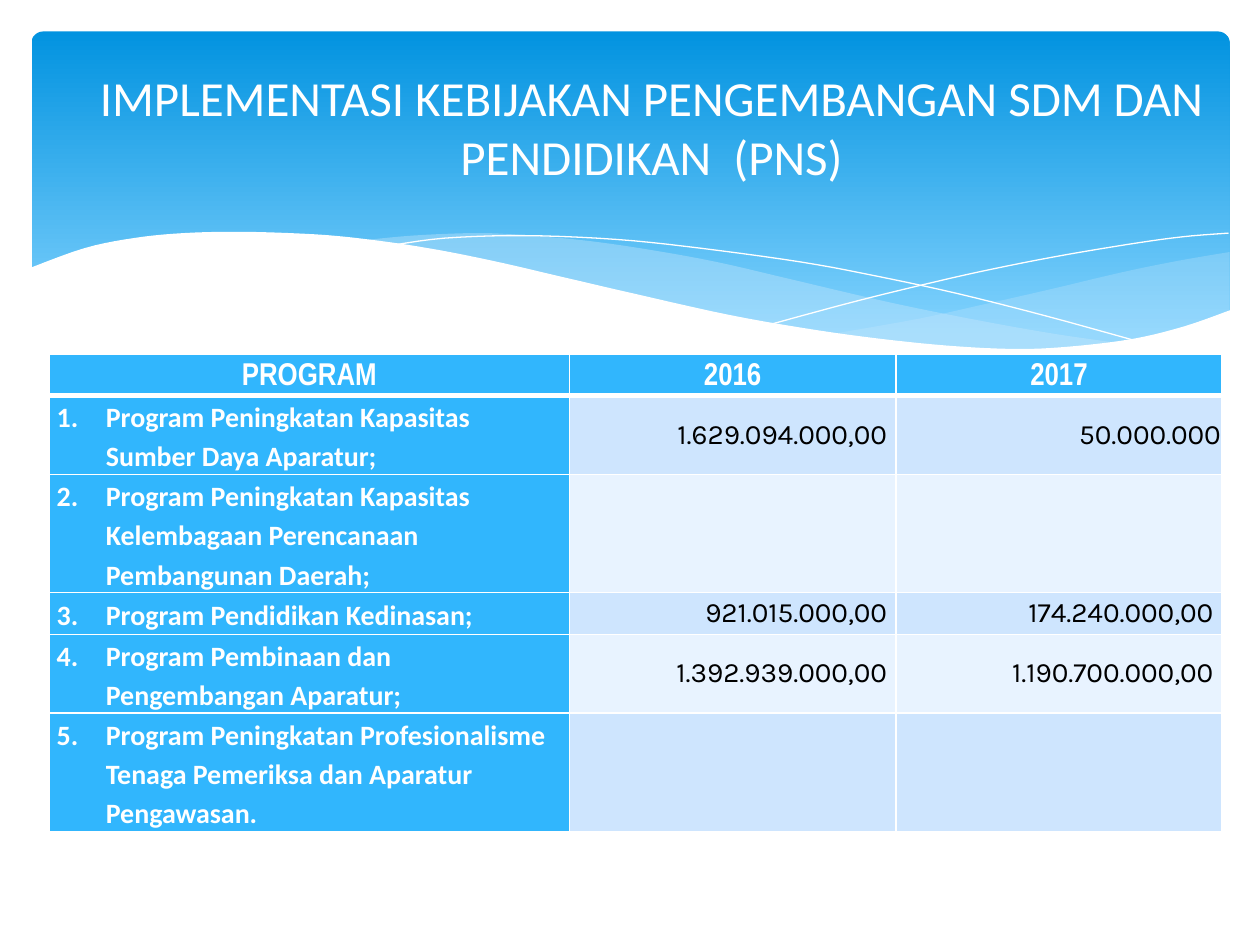
import pptx
import pptx.util
import pptx.dml.color
import pptx.enum.shapes
import pptx.enum.text
import pptx.oxml
import pptx.oxml.ns
from lxml import etree

Inches, Pt = pptx.util.Inches, pptx.util.Pt
RGBColor = pptx.dml.color.RGBColor
PP_ALIGN = pptx.enum.text.PP_ALIGN
MIDDLE = pptx.enum.text.MSO_ANCHOR.MIDDLE
qn = pptx.oxml.ns.qn

WHITE = RGBColor(0xFF, 0xFF, 0xFF)
BLACK = RGBColor(0, 0, 0)
SKY_DARK = RGBColor(0x02, 0x93, 0xE0)
SKY_LIGHT = RGBColor(0x83, 0xD3, 0xFE)
MIST = RGBColor(0xC6, 0xE7, 0xFC)
HEADER_BLUE = RGBColor(0x31, 0xB6, 0xFD)
BANDS = RGBColor(0xCE, 0xE5, 0xFE), RGBColor(0xE8, 0xF3, 0xFF)

TITLE_ONLY = 5
TEXT_FONT, HEADER_FONT, NUMBER_FONT = "Calibri", "Arial Narrow", "Karla"


def smooth(points, steps=5):
    """Catmull-Rom curve through the points."""
    ends = [points[0], *points, points[-1]]
    curve = [points[0]]
    for a, b, c, d in zip(ends, ends[1:], ends[2:], ends[3:]):
        for step in range(1, steps + 1):
            t = step / steps
            curve.append(tuple(
                0.5 * (2 * q + (r - p) * t + (2 * p - 5 * q + 4 * r - s) * t ** 2
                       + (3 * q - p - 3 * r + s) * t ** 3)
                for p, q, r, s in zip(a, b, c, d)))
    return curve


class Deck:
    def __init__(self):
        self.presentation = pptx.Presentation()
        self.presentation.slide_width = Inches(10)
        self.presentation.slide_height = Inches(7.5)
        layout = self.presentation.slide_layouts[TITLE_ONLY]
        self.slide = self.presentation.slides.add_slide(layout)
        self.shapes = self.slide.shapes

    def panel(self, left, top, width, height):
        panel = self.shapes.add_shape(
            pptx.enum.shapes.MSO_SHAPE.ROUNDED_RECTANGLE,
            Inches(left), Inches(top), Inches(width), Inches(height))
        panel.adjustments[0] = 0.034
        panel.shadow.inherit = False
        panel.line.fill.background()
        panel.fill.gradient()
        panel.fill.gradient_angle = 270
        stops = panel.fill.gradient_stops
        for stop, position, color in zip(stops, (0, 0.9), (SKY_DARK, SKY_LIGHT)):
            stop.position = position
            stop.color.rgb = color

    def outline(self, points, close):
        corners = [(Inches(x), Inches(y)) for x, y in points]
        builder = self.shapes.build_freeform(*corners[0])
        builder.add_line_segments(corners[1:], close=close)
        shape = builder.convert_to_shape()
        shape.shadow.inherit = False
        return shape

    def wave(self, points, color, opacity=100):
        wave = self.outline(points, close=True)
        wave.line.fill.background()
        wave.fill.solid()
        wave.fill.fore_color.rgb = color
        if opacity < 100:
            tint = wave.fill._xPr.find(".//" + qn("a:srgbClr"))
            etree.SubElement(tint, qn("a:alpha"), val=str(opacity * 1000))

    def thread(self, points):
        thread = self.outline(smooth(points), close=False)
        thread.fill.background()
        thread.line.color.rgb = WHITE
        thread.line.width = Pt(0)

    def title(self, text, left, top, width, height):
        title = self.shapes.title
        self.shapes._spTree.append(title._element)  # in front of the waves
        title.left, title.top = Inches(left), Inches(top)
        title.width, title.height = Inches(width), Inches(height)
        frame = title.text_frame
        frame.text = text
        frame.word_wrap = True
        frame.auto_size = pptx.enum.text.MSO_AUTO_SIZE.NONE
        frame.vertical_anchor = MIDDLE
        self.style(frame.paragraphs[0], TEXT_FONT, 28, WHITE, PP_ALIGN.CENTER)

    def style(self, paragraph, font, size, color, align, bold=False):
        paragraph.alignment = align
        paragraph.font.name = font
        paragraph.font.size = Pt(size)
        paragraph.font.bold = bold
        paragraph.font.color.rgb = color

    def table(self, left, top, widths, heights):
        table = self.shapes.add_table(
            len(heights), len(widths), Inches(left), Inches(top),
            Inches(sum(widths)), Inches(sum(heights))).table
        table.first_row = table.horz_banding = False
        for column, width in zip(table.columns, widths):
            column.width = Inches(width)
        for row, height in zip(table.rows, heights):
            row.height = Inches(height)
        return table

    def cell(self, cell, text, fill, margins, top_line=1, bottom_line=1):
        properties = cell._tc.get_or_add_tcPr()
        for side, width in zip("LRTB", (1, 1, top_line, bottom_line)):
            properties.append(pptx.oxml.parse_xml(
                f'<a:ln{side} xmlns:a="{pptx.oxml.ns.nsdecls("a").split(chr(34))[1]}"'
                f' w="{Pt(width)}"><a:solidFill><a:srgbClr val="{WHITE}"/>'
                f'</a:solidFill></a:ln{side}>'))
        cell.fill.solid()
        cell.fill.fore_color.rgb = fill
        cell.margin_left, cell.margin_right = map(Inches, margins)
        cell.margin_top = cell.margin_bottom = 0
        cell.vertical_anchor = MIDDLE
        cell.text = text
        return cell.text_frame.paragraphs[0]

    def header_cell(self, cell, text):
        paragraph = self.cell(cell, text, HEADER_BLUE, (0.05, 0.05), bottom_line=3)
        self.style(paragraph, HEADER_FONT, 18, WHITE, PP_ALIGN.CENTER, bold=True)
        paragraph.line_spacing = 1.15

    def program_cell(self, cell, text, top_line, auto_number):
        paragraph = self.cell(cell, text, HEADER_BLUE, (0.06, 0.06), top_line)
        self.style(paragraph, TEXT_FONT, 16, WHITE, PP_ALIGN.LEFT, bold=True)
        paragraph.line_spacing = 1.15
        properties = paragraph._p.get_or_add_pPr()
        properties.set("marL", str(Inches(0.39)))
        properties.set("indent", str(Inches(-0.39)))
        if auto_number:
            number = etree.Element(qn("a:buAutoNum"), type="arabicPeriod")
            properties.find(qn("a:lnSpc")).addnext(number)

    def amount_cell(self, cell, text, fill, top_line, right_margin):
        paragraph = self.cell(cell, text, fill, (0.01, right_margin), top_line)
        self.style(paragraph, NUMBER_FONT, 16, BLACK, PP_ALIGN.RIGHT)


def main():
    deck = Deck()

    # Banner with waves
    deck.panel(0.25, 0.25, 9.51, 2.7)
    deck.wave(
        smooth([(9.76, 2), (9.35, 2.07), (8.91, 2.16), (8.32, 2.3), (7.79, 2.42),
                (7.29, 2.53), (6.61, 2.65)])
        + smooth([(6.61, 2.65), (7.05, 2.71), (7.57, 2.76), (8.14, 2.78),
                  (8.63, 2.75), (9.05, 2.69), (9.42, 2.59), (9.76, 2.47)]),
        MIST, 29)
    deck.wave(
        smooth([(8.93, 2.73), (8.37, 2.65), (7.75, 2.54), (7.06, 2.4), (6.29, 2.22),
                (5.69, 2.08), (5.14, 1.98), (4.65, 1.91), (4.2, 1.87), (3.8, 1.85),
                (3.28, 1.87), (2.86, 1.91)])
        + smooth([(2.86, 1.91), (3.42, 1.99), (4.04, 2.11), (4.49, 2.22), (5.3, 2.4),
                  (6.01, 2.55), (6.65, 2.66), (7.22, 2.74), (7.73, 2.77),
                  (8.28, 2.78), (8.93, 2.73)]),
        MIST, 40)
    deck.thread([(3.09, 1.95), (3.53, 1.89), (4.16, 1.87), (4.89, 1.9), (5.56, 1.97),
                 (6.36, 2.08), (6.95, 2.19), (7.6, 2.33), (8.31, 2.51), (9.07, 2.72)])
    deck.thread([(6.13, 2.57), (6.72, 2.41), (7.2, 2.29), (7.76, 2.16), (8.36, 2.04),
                 (8.95, 1.94), (9.38, 1.88), (9.75, 1.85)])
    deck.wave(
        smooth([(9.77, 2.46), (9.4, 2.59), (8.99, 2.69), (8.5, 2.75), (8.09, 2.77),
                (7.61, 2.75), (7.08, 2.7), (6.48, 2.62), (5.79, 2.5), (5.03, 2.33),
                (4.47, 2.2), (3.91, 2.07), (3.4, 1.97), (2.92, 1.9), (2.5, 1.86),
                (1.93, 1.84), (1.46, 1.85), (1.06, 1.89), (0.67, 1.97), (0.23, 2.13)])
        + [(0.23, 3.29), (9.77, 3.29)],
        WHITE)

    deck.title("IMPLEMENTASI KEBIJAKAN PENGEMBANGAN SDM DAN PENDIDIKAN  (PNS)",
               0.67, 0.32, 9, 1.37)

    # Budget per program and year
    programs = [
        ("Program Peningkatan Kapasitas Sumber Daya Aparatur;",
         "1.629.094.000,00", "50.000.000"),
        ("Program Peningkatan Kapasitas Kelembagaan Perencanaan Pembangunan Daerah;",
         "", ""),
        ("Program Pendidikan Kedinasan;", "921.015.000,00", "174.240.000,00"),
        ("Program Pembinaan dan Pengembangan Aparatur;",
         "1.392.939.000,00", "1.190.700.000,00"),
        ("Program Peningkatan Profesionalisme Tenaga Pemeriksa dan Aparatur Pengawasan.",
         "", ""),
    ]
    budget = deck.table(0.39, 2.81, (4.13, 2.59, 2.59),
                        (0.33, 0.62, 0.94, 0.33, 0.62, 0.94))
    for column, heading in enumerate(("PROGRAM", "2016", "2017")):
        deck.header_cell(budget.cell(0, column), heading)
    for row, (program, *amounts) in enumerate(programs, 1):
        first = row == 1
        top_line = 3 if first else 1
        label = program if first else f"{row}.\t{program}"
        deck.program_cell(budget.cell(row, 0), label, top_line, auto_number=first)
        for column, amount in enumerate(amounts, 1):
            right_margin = 0.07 if amount.endswith(",00") else 0.01
            deck.amount_cell(budget.cell(row, column), amount, BANDS[(row - 1) % 2],
                             top_line, right_margin)

    deck.presentation.save("out.pptx")


if __name__ == "__main__":
    main()
